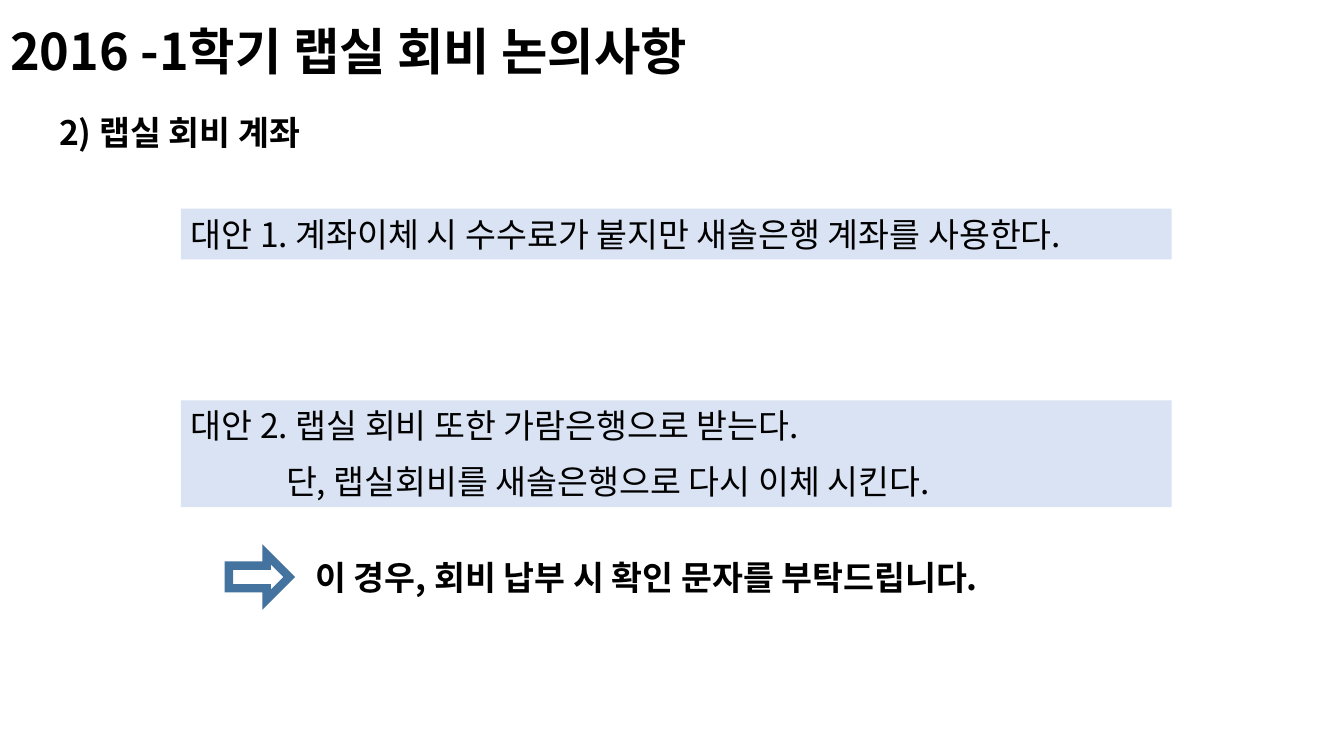
from lxml import etree
from pptx import Presentation
from pptx.dml.color import RGBColor
from pptx.enum import shapes, text
from pptx.oxml import ns
from pptx.util import Cm, Pt

FONT = "Noto Sans CJK KR"
BLACK = RGBColor(0x00, 0x00, 0x00)
PALE_BLUE = RGBColor(0xDA, 0xE3, 0xF3)
ARROW_BLUE = RGBColor(0x43, 0x73, 0x9E)


def write(sp, lines, size=24, bold=False):
    tf = sp.text_frame
    tf.word_wrap = True
    tf.auto_size = text.MSO_AUTO_SIZE.NONE
    tf.text = "\n".join(lines)
    for p in tf.paragraphs:
        p.alignment = text.PP_ALIGN.LEFT
        for r in p.runs:
            r.font.name = FONT
            r.font.size = Pt(size)
            r.font.bold = bold
            r.font.color.rgb = BLACK
            ea = etree.SubElement(r.font._element, ns.qn("a:ea"))
            ea.set("typeface", FONT)
    return tf


def add_title(s, left, top, width, height, line):
    sp = s.shapes.title
    sp.left, sp.top, sp.width, sp.height = left, top, width, height
    tf = write(sp, [line], size=36, bold=True)
    tf.vertical_anchor = text.MSO_ANCHOR.MIDDLE
    tf.paragraphs[0].line_spacing = 0.9


def add_label(s, left, top, width, height, line):
    write(s.shapes.add_textbox(left, top, width, height), [line], bold=True)


def add_option(s, left, top, width, height, lines):
    """Tinted band; lines after the first are indented under it."""
    sp = s.shapes.add_shape(shapes.MSO_SHAPE.RECTANGLE, left, top, width, height)
    sp.shadow.inherit = False
    sp.fill.solid()
    sp.fill.fore_color.rgb = PALE_BLUE
    sp.line.fill.background()
    tf = write(sp, lines)
    tf.vertical_anchor = text.MSO_ANCHOR.TOP
    for p in tf.paragraphs[1:]:
        p.space_before = Pt(11)
        p._p.get_or_add_pPr().set("marL", str(Cm(2.4)))


def add_request(s, left, top, width, height, line):
    """Outlined arrow followed by a bold request."""
    sp = s.shapes.add_shape(shapes.MSO_SHAPE.RIGHT_ARROW,
                            left, top + Cm(0.05), Cm(1.52), Cm(1.14))
    sp.shadow.inherit = False
    sp.fill.background()
    sp.line.color.rgb = ARROW_BLUE
    sp.line.width = Pt(6)
    miter = etree.SubElement(sp.line._get_or_add_ln(), ns.qn("a:miter"))
    miter.set("lim", "800000")
    offset = Cm(1.93)
    add_label(s, left + offset, top, width - offset, height, line)


def main():
    prs = Presentation()
    prs.slide_width, prs.slide_height = Cm(33.87), Cm(19.05)
    s = prs.slides.add_slide(prs.slide_layouts[5])
    add_title(s, 0, 0, Cm(21.2), Cm(2.74), "2016 -1학기 랩실 회비 논의사항")
    add_label(s, Cm(1.24), Cm(2.7), Cm(7.35), Cm(1.28), "2) 랩실 회비 계좌")
    left, width = Cm(4.56), Cm(24.97)
    add_option(s, left, Cm(5.26), width, Cm(1.28),
               ["대안 1. 계좌이체 시 수수료가 붙지만 새솔은행 계좌를 사용한다."])
    add_option(s, left, Cm(10.09), width, Cm(2.69),
               ["대안 2. 랩실 회비 또한 가람은행으로 받는다.",
                "단, 랩실회비를 새솔은행으로 다시 이체 시킨다."])
    add_request(s, Cm(5.77), Cm(13.92), Cm(21.26), Cm(1.28),
                "이 경우, 회비 납부 시 확인 문자를 부탁드립니다.")
    prs.save("out.pptx")


if __name__ == "__main__":
    main()
